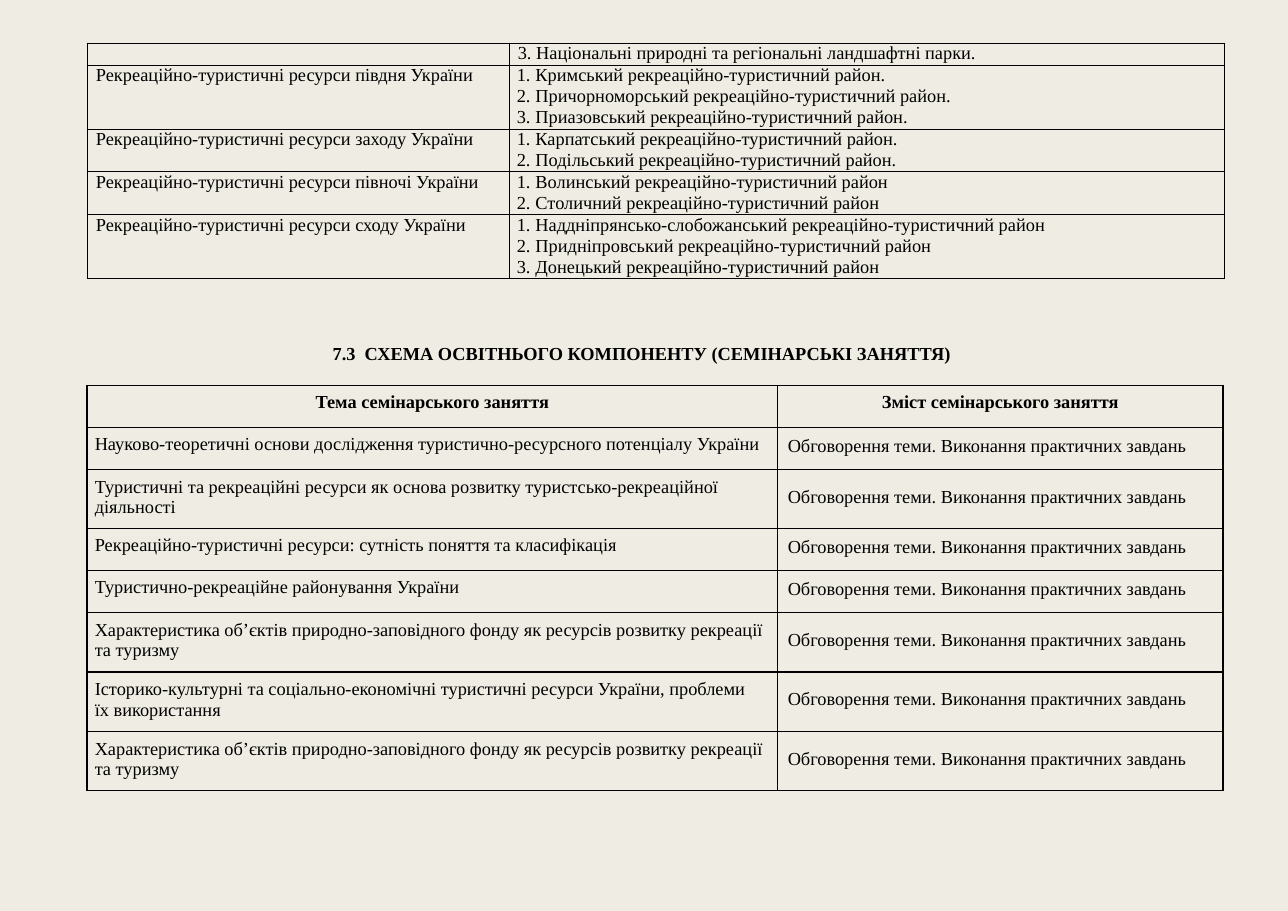
"""Builds the slide with the course topics and the seminar scheme."""
from dataclasses import dataclass

from lxml.etree import SubElement as Sub
from pptx import Presentation
from pptx.dml.color import RGBColor as Rgb
from pptx.enum.text import PP_ALIGN as Align
from pptx.oxml.ns import qn
from pptx.util import Inches, Pt


@dataclass(frozen=True)
class Theme:
    paper: str = "EFEDE3"
    ink: str = "000000"
    face: str = "Times New Roman"
    size: float = 12
    thin: float = 0.5
    thick: float = 1


THEME = Theme()
LEFT = 0.79
PLAN_COLS = (3.83, 6.49)
TASK_COLS = (6.27, 4.04)
TITLE = "7.3\tСХЕМА ОСВІТНЬОГО КОМПОНЕНТУ (СЕМІНАРСЬКІ ЗАНЯТТЯ)"
HEADS = ("Тема семінарського заняття", "Зміст семінарського заняття")
TASK = "Обговорення теми. Виконання практичних завдань"
FIRST = "3. Національні природні та регіональні ландшафтні парки."
TYPE = "рекреаційно-туристичний район"
REGIONS = [
    ("півдня", ".", ("Кримський", "Причорноморський", "Приазовський")),
    ("заходу", ".", ("Карпатський", "Подільський")),
    ("півночі", "", ("Волинський", "Столичний")),
    ("сходу", "", ("Наддніпрянсько-слобожанський", "Придніпровський", "Донецький")),
]
NATURE = "Характеристика об’єктів природно-заповідного фонду як ресурсів розвитку рекреації та туризму"
TOPICS = [
    ("Науково-теоретичні основи дослідження туристично-ресурсного потенціалу України", 1, 0),
    ("Туристичні та рекреаційні ресурси як основа розвитку туристсько-рекреаційної діяльності", 2, 0),
    ("Рекреаційно-туристичні ресурси: сутність поняття та класифікація", 1, 0),
    ("Туристично-рекреаційне районування України", 1, 0),
    (NATURE, 2, 0),
    ("Історико-культурні та соціально-економічні туристичні ресурси України, проблеми їх використання", 2, 0.2),
    (NATURE, 2, 0),
]


def write(frame, lines, left=0, hang=0, count=False, bold=False, align=Align.LEFT, lead=None):
    """Fill a text frame with evenly styled paragraphs."""
    frame.word_wrap = True
    for i, line in enumerate(lines):
        para = frame.add_paragraph() if i else frame.paragraphs[0]
        para.text = line
        para.alignment = align
        if lead:
            para.line_spacing = Pt(lead)
        props = para._p.get_or_add_pPr()
        props.set("marL", str(Inches(left)))
        props.set("indent", str(Inches(-hang)))
        if count:
            Sub(props, qn("a:buAutoNum"), type="arabicPeriod")
        font = para.font
        font.name, font.size, font.bold = THEME.face, Pt(THEME.size), bold
        font.color.rgb = Rgb.from_string(THEME.ink)


def pad(box, top=0, right=0):
    """Set the inner margins of a cell or text frame."""
    box.margin_left = box.margin_bottom = 0
    box.margin_top, box.margin_right = Inches(top), Inches(right)


def rule(cell, width):
    """Draw the four borders of a cell and clear its fill."""
    props = cell._tc.get_or_add_tcPr()
    for side in "LRTB":
        line = Sub(props, qn(f"a:ln{side}"), w=str(Pt(width)))
        fill = Sub(line, qn("a:solidFill"))
        Sub(fill, qn("a:srgbClr"), val=THEME.ink)
    cell.fill.background()


def add_grid(slide, top, cols, rows, width):
    """Add a bordered table with the given column widths and row heights."""
    shape = slide.shapes.add_table(
        len(rows), len(cols), Inches(LEFT), Inches(top), Inches(sum(cols)), Inches(sum(rows)))
    grid = shape.table
    grid.first_row = grid.horz_banding = False
    for col, size in zip(grid.columns, cols):
        col.width = Inches(size)
    for row, size in zip(grid.rows, rows):
        row.height = Inches(size)
    for cell in grid.iter_cells():
        rule(cell, width)
        pad(cell)
    return grid


def add_plan(slide):
    """Add the table of regional resources."""
    sizes = {2: 0.39, 3: 0.58}
    rows = [0.2] + [sizes[len(areas)] for _, _, areas in REGIONS]
    grid = add_grid(slide, 0.39, PLAN_COLS, rows, THEME.thin)
    write(grid.cell(0, 0).text_frame, [""], lead=13.6)
    write(grid.cell(0, 1).text_frame, [FIRST], 0.08, lead=13.6)
    for i, (side, stop, areas) in enumerate(REGIONS, 1):
        name = f"Рекреаційно-туристичні ресурси {side} України"
        write(grid.cell(i, 0).text_frame, [name], 0.08, lead=13.6)
        lines = [f"{area} {TYPE}{stop}" for area in areas]
        write(grid.cell(i, 1).text_frame, lines, 0.24, 0.17, count=True, lead=13.6)


def add_title(slide):
    """Add the section title."""
    box = slide.shapes.add_textbox(Inches(3.01), Inches(3.09), Inches(5.75), Inches(0.23))
    pad(box.text_frame, 0.02)
    write(box.text_frame, [TITLE], 0.3, 0.29, bold=True)


def add_tasks(slide):
    """Add the table of seminar topics."""
    sizes = {1: 0.38, 2: 0.54}
    rows = [sizes[1]] + [sizes[count] for _, count, _ in TOPICS]
    grid = add_grid(slide, 3.5, TASK_COLS, rows, THEME.thick)
    for i, head in enumerate(HEADS):
        pad(grid.cell(0, i), 0.06)
        write(grid.cell(0, i).text_frame, [head], bold=True, align=Align.CENTER)
    for i, (topic, count, right) in enumerate(TOPICS, 1):
        name, task = grid.cell(i, 0), grid.cell(i, 1)
        pad(name, 0.05 + 0.01 * count, right)
        write(name.text_frame, [topic], 0.07)
        pad(task, 0.08 * count)
        write(task.text_frame, [TASK], 0.09)


def main():
    """Build and save the slide."""
    deck = Presentation()
    deck.slide_width, deck.slide_height = Inches(11.69), Inches(8.27)
    slide = deck.slides.add_slide(deck.slide_layouts[6])
    fill = slide.background.fill
    fill.solid()
    fill.fore_color.rgb = Rgb.from_string(THEME.paper)
    add_plan(slide)
    add_title(slide)
    add_tasks(slide)
    deck.save("out.pptx")


if __name__ == "__main__":
    main()
